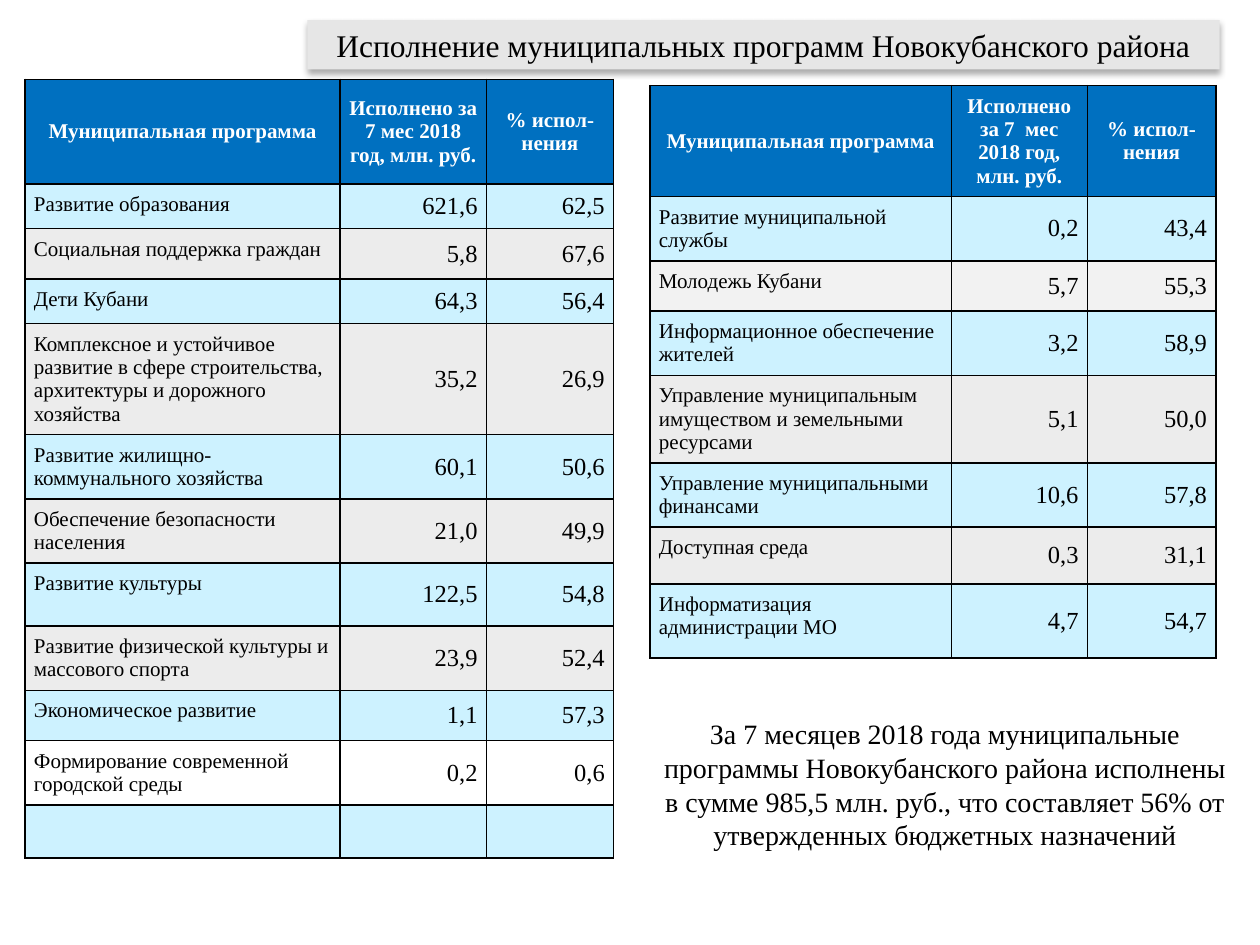
"""Build the slide on spending under the municipal programmes of the Novokubansky district."""
from lxml.etree import SubElement
from pptx import Presentation
from pptx.dml.color import RGBColor
from pptx.enum.shapes import MSO_SHAPE
from pptx.enum.text import MSO_ANCHOR, PP_ALIGN
from pptx.oxml import parse_xml
from pptx.oxml.ns import nsdecls, qn
from pptx.util import Inches, Pt

BLACK = RGBColor(0x00, 0x00, 0x00)
WHITE = RGBColor(0xFF, 0xFF, 0xFF)
HEADER_BLUE = RGBColor(0x00, 0x70, 0xC0)
LIGHT_BLUE = RGBColor(0xCD, 0xF2, 0xFF)
LIGHT_GREY = RGBColor(0xEC, 0xEC, 0xEC)
PALE_GREY = RGBColor(0xF2, 0xF2, 0xF2)
TITLE_GREY = RGBColor(0xE6, 0xE6, 0xE6)
FONT = "Times New Roman"


def write(frame, text, size=12, color=BLACK, bold=False, align=PP_ALIGN.LEFT):
    frame.word_wrap = True
    paragraph = frame.paragraphs[0]
    paragraph.alignment = align
    run = paragraph.add_run()
    run.text = text
    run.font.name = FONT
    run.font.size = Pt(size)
    run.font.bold = bold
    run.font.color.rgb = color


def add_borders(cell):
    properties = cell._tc.get_or_add_tcPr()
    for side in ("a:lnL", "a:lnR", "a:lnT", "a:lnB"):
        line = SubElement(properties, qn(side), w=str(Pt(1)))
        fill = SubElement(line, qn("a:solidFill"))
        SubElement(fill, qn("a:srgbClr"), val=str(BLACK))


programme_tables = [
    {
        "left": 5.16,
        "top": 0.68,
        "widths": [2.39, 1.08, 1.02],
        "header": ("Муниципальная программа", "Исполнено за 7  мес 2018 год, млн. руб.", "% испол-нения"),
        "header_height": 0.87,
        "rows": [
            (0.51, LIGHT_BLUE, "Развитие муниципальной службы", "0,2", "43,4"),
            (0.4, PALE_GREY, "Молодежь Кубани", "5,7", "55,3"),
            (0.51, LIGHT_BLUE, "Информационное обеспечение жителей", "3,2", "58,9"),
            (0.69, LIGHT_GREY, "Управление муниципальным имуществом и земельными ресурсами", "5,1", "50,0"),
            (0.51, LIGHT_BLUE, "Управление муниципальными финансами", "10,6", "57,8"),
            (0.45, LIGHT_GREY, "Доступная среда", "0,3", "31,1"),
            (0.59, LIGHT_BLUE, "Информатизация администрации МО", "4,7", "54,7"),
        ],
    },
    {
        "left": 0.2,
        "top": 0.63,
        "widths": [2.5, 1.16, 1.01],
        "header": ("Муниципальная программа", "Исполнено за 7 мес 2018 год, млн. руб.", "% испол-нения"),
        "header_height": 0.83,
        "rows": [
            (0.35, LIGHT_BLUE, "Развитие образования", "621,6", "62,5"),
            (0.4, LIGHT_GREY, "Социальная поддержка граждан", "5,8", "67,6"),
            (0.35, LIGHT_BLUE, "Дети Кубани", "64,3", "56,4"),
            (0.87, LIGHT_GREY, "Комплексное и устойчивое развитие в сфере строительства, "
             "архитектуры и дорожного хозяйства", "35,2", "26,9"),
            (0.51, LIGHT_BLUE, "Развитие жилищно-коммунального хозяйства", "60,1", "50,6"),
            (0.51, LIGHT_GREY, "Обеспечение безопасности населения", "21,0", "49,9"),
            (0.5, LIGHT_BLUE, "Развитие культуры", "122,5", "54,8"),
            (0.51, LIGHT_GREY, "Развитие физической культуры и массового спорта", "23,9", "52,4"),
            (0.4, LIGHT_BLUE, "Экономическое развитие", "1,1", "57,3"),
            (0.51, WHITE, "Формирование современной городской среды", "0,2", "0,6"),
            (0.4, LIGHT_BLUE, "", "", ""),
        ],
    },
]

presentation = Presentation()
presentation.slide_width = Inches(10)
presentation.slide_height = Inches(7.5)
slide = presentation.slides.add_slide(presentation.slide_layouts[6])

title = slide.shapes.add_shape(MSO_SHAPE.RECTANGLE, Inches(2.44), Inches(0.16), Inches(7.24), Inches(0.39))
title.fill.solid()
title.fill.fore_color.rgb = TITLE_GREY
title.line.fill.background()
title._element.spPr.append(parse_xml(
    f'<a:effectLst {nsdecls("a")}><a:outerShdw blurRad="{Pt(3.5)}" dist="{Pt(2.2)}" dir="5400000" '
    f'rotWithShape="0"><a:srgbClr val="{BLACK}"><a:alpha val="32000"/></a:srgbClr>'
    '</a:outerShdw></a:effectLst>'
))
title.text_frame.vertical_anchor = MSO_ANCHOR.MIDDLE
write(title.text_frame, "Исполнение муниципальных программ Новокубанского района", size=18, align=PP_ALIGN.CENTER)

for programmes in programme_tables:
    rows = [(programmes["header_height"], HEADER_BLUE, *programmes["header"]), *programmes["rows"]]
    widths = programmes["widths"]
    table = slide.shapes.add_table(
        len(rows), len(widths), Inches(programmes["left"]), Inches(programmes["top"]),
        Inches(sum(widths)), Inches(sum(row[0] for row in rows)),
    ).table
    for column, width in zip(table.columns, widths):
        column.width = Inches(width)
    for row_index, (height, fill_color, *texts) in enumerate(rows):
        table.rows[row_index].height = Inches(height)
        for column_index, text in enumerate(texts):
            cell = table.cell(row_index, column_index)
            cell.margin_left = cell.margin_right = cell.margin_top = cell.margin_bottom = Inches(0.07)
            add_borders(cell)
            cell.fill.solid()
            cell.fill.fore_color.rgb = fill_color
            if row_index == 0:
                cell.vertical_anchor = MSO_ANCHOR.MIDDLE
                write(cell.text_frame, text, color=WHITE, bold=True, align=PP_ALIGN.CENTER)
            elif column_index == 0:
                cell.vertical_anchor = MSO_ANCHOR.TOP
                write(cell.text_frame, text)
            else:
                cell.vertical_anchor = MSO_ANCHOR.MIDDLE
                write(cell.text_frame, text, size=14, align=PP_ALIGN.RIGHT)

summary = slide.shapes.add_textbox(Inches(5.13), Inches(5.64), Inches(4.74), Inches(1.18))
write(
    summary.text_frame,
    "За 7 месяцев 2018 года муниципальные программы Новокубанского района исполнены "
    "в сумме 985,5 млн. руб., что составляет 56% от утвержденных бюджетных назначений",
    size=16, align=PP_ALIGN.CENTER,
)

presentation.save("out.pptx")
